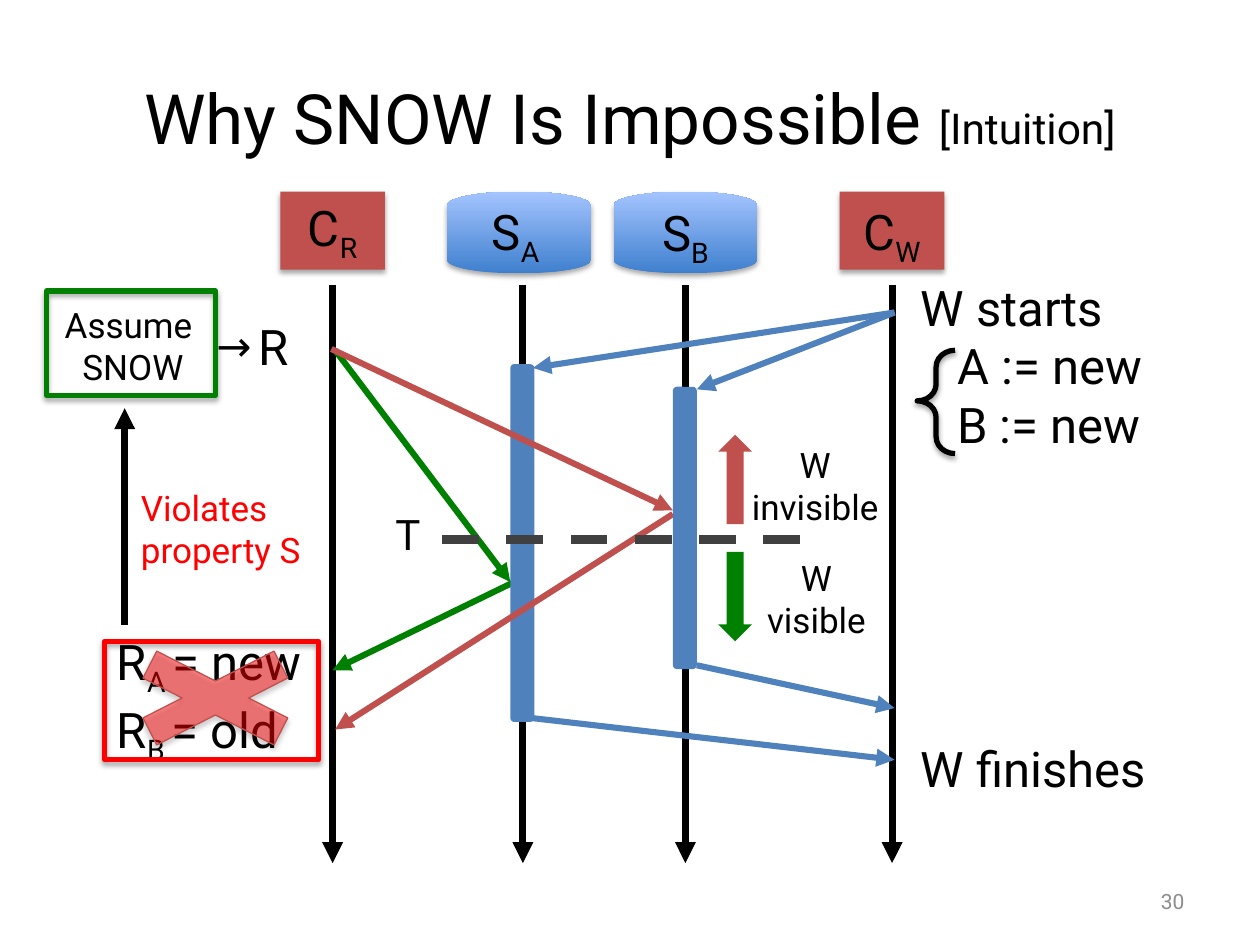
from pptx import Presentation
from pptx.dml.color import RGBColor
from pptx.enum.dml import MSO_LINE
from pptx.enum.shapes import MSO_CONNECTOR, MSO_SHAPE
from pptx.enum.text import MSO_ANCHOR, PP_ALIGN
from pptx.oxml.ns import qn
from pptx.util import Inches, Pt
from lxml import etree

RECT, DISK = MSO_SHAPE.RECTANGLE, MSO_SHAPE.FLOWCHART_MAGNETIC_DISK
LEFT, CENTER, RIGHT = PP_ALIGN.LEFT, PP_ALIGN.CENTER, PP_ALIGN.RIGHT
TOP, MIDDLE = MSO_ANCHOR.TOP, MSO_ANCHOR.MIDDLE

THEME = dict(
    font="Roboto", black="000000", grey="8C8C8C", dash="404040",
    red="C0504D", blue="4F81BD", green="008000", alert="FF0000",
    disk=("3F80CE", "A4C4FF"),
    title=39.6, aside=24.3, big=28, mid=24, small=20, number=12,
    axis=4, message=3.5, cut=5.25, frame=3, hair=0.75,
)
T = THEME

# Lanes: name, subscript, axis x, head centre, head shape, head size, label top, label width, align
CLIENT, SERVER = (0.83, 0.62), (1.14, 0.65)
LANES = [
    ("C", "R", 2.64, 2.64, RECT, CLIENT, 1.52, 1.23, CENTER),
    ("S", "A", 4.15, 4.12, DISK, SERVER, 1.55, 0.69, LEFT),
    ("S", "B", 5.44, 5.44, DISK, SERVER, 1.56, 0.69, CENTER),
    ("C", "W", 7.08, 7.08, RECT, CLIENT, 1.55, 1.23, CENTER),
]
HEAD_TOP, AXIS_TOP, AXIS_END = 1.52, 2.26, 6.85
BAR_W = 0.19

# Steps from back to front: messages (colour, from, to) and server bars (x, top, height)
STEPS = [
    ("blue", (7.1, 2.48), (4.23, 2.92)),
    ("blue", (7.1, 2.48), (5.53, 3.09)),
    ("green", (2.66, 2.78), (4.05, 4.62)),
    ("green", (4.12, 4.6), (2.64, 5.32)),
    ("blue", (5.53, 5.28), (7.1, 5.62)),
    ("blue", (4.23, 5.7), (7.1, 6.03)),
    ("bar", 4.05, 2.89, 2.84),
    ("red", (2.63, 2.77), (5.34, 4.05)),
    ("red", (5.34, 4.08), (2.66, 5.79)),
    ("bar", 5.34, 3.07, 2.24),
]

# Texts: box, paragraphs, format
TEXTS = [
    ((0.5, 0.3, 9, 1.25), [["Why SNOW Is Impossible ", ("[Intuition]", dict(size=T["aside"]))]],
     dict(size=T["title"], align=CENTER, anchor=MIDDLE)),
    ((7.17, 6.95, 2.33, 0.4), ["30"],
     dict(size=T["number"], color=T["grey"], align=RIGHT, anchor=MIDDLE)),
    ((0.83, 4.96, 1.88, 0.57), [["R", ("A ", dict(sub=True)), "= new"]], {}),
    ((0.83, 5.5, 1.67, 0.57), [["R", ("B ", dict(sub=True)), "= old"]], {}),
    ((7.21, 2.15, 2.4, 1.99), ["W starts", "A := new", "B := new"], dict(indents=(0, 0.29, 0.29))),
    ((7.21, 5.81, 2.44, 0.57), ["W finishes"], {}),
    ((5.78, 3.47, 1.38, 0.77), ["W", "invisible"], dict(size=T["small"], align=CENTER)),
    ((5.92, 4.37, 1.12, 0.77), ["W", "visible"], dict(size=T["small"], align=CENTER)),
    ((1.95, 2.46, 0.48, 0.57), ["R"], {}),
    ((3.04, 3.99, 0.4, 0.5), ["T"], dict(size=T["mid"])),
    ((0.4, 2.36, 1.31, 0.77), ["Assume ", "SNOW"], dict(size=T["small"], align=CENTER)),
    ((1.62, 2.49, 0.53, 0.5), ["→"], dict(size=T["mid"])),
    ((1.02, 3.81, 1.56, 0.77), ["Violates", "property S"],
     dict(size=T["small"], color=T["alert"])),
]

# Shapes: preset, box, format
SHAPES = [
    (MSO_SHAPE.UP_ARROW, (5.7, 3.45, 0.27, 0.71), dict(fill=T["red"])),
    (MSO_SHAPE.DOWN_ARROW, (5.7, 4.38, 0.27, 0.71), dict(fill=T["green"])),
    (MSO_SHAPE.LEFT_BRACE, (7.28, 2.78, 0.3, 0.82),
     dict(line=T["black"], shadow=38, adjust=(0.44, 0.49))),
    (RECT, (0.83, 5.09, 1.7, 0.94), dict(line=T["alert"], shadow=35)),
    (MSO_SHAPE.MATH_MULTIPLY, (0.71, 5.03, 2, 1.02),
     dict(fill=T["alert"], alpha=47, line=T["red"], width=T["hair"], shadow=35)),
    (RECT, (0.37, 2.31, 1.34, 0.83), dict(line=T["green"], shadow=35)),
]


def rgb(color):
    return RGBColor.from_string(color)


def add_alpha(parent, percent):
    etree.SubElement(parent, qn("a:alpha"), val=str(percent * 1000))


def add_shadow(sp, percent):
    """Put a soft black shadow below the shape."""
    effects = sp._element.spPr.find(qn("a:effectLst"))
    outer = etree.SubElement(effects, qn("a:outerShdw"), blurRad=str(Pt(3.1)),
                             dist=str(Pt(1.8)), dir="5400000", rotWithShape="0")
    add_alpha(etree.SubElement(outer, qn("a:srgbClr"), val=T["black"]), percent)


def add_shape(s, preset, box, fill=None, alpha=None, line=None, width=T["frame"],
              shadow=None, adjust=()):
    """A tuple as fill gives a gradient from bottom to top."""
    sp = s.shapes.add_shape(preset, *map(Inches, box))
    for i, value in enumerate(adjust):
        sp.adjustments[i] = value
    if fill is None:
        sp.fill.background()
    elif isinstance(fill, tuple):
        sp.fill.gradient()
        sp.fill.gradient_angle = 90
        for stop, color in zip(sp.fill.gradient_stops, fill):
            stop.color.rgb = rgb(color)
    else:
        sp.fill.solid()
        sp.fill.fore_color.rgb = rgb(fill)
        if alpha:
            add_alpha(sp._element.spPr.find(qn("a:solidFill"))[0], alpha)
    if line:
        sp.line.color.rgb = rgb(line)
        sp.line.width = Pt(width)
    else:
        sp.line.fill.background()
    sp.shadow.inherit = False
    if shadow:
        add_shadow(sp, shadow)


def add_line(s, start, end, color, width, arrow=True, dash=None):
    c = s.shapes.add_connector(MSO_CONNECTOR.STRAIGHT, *map(Inches, start + end))
    c.line.color.rgb = rgb(color)
    c.line.width = Pt(width)
    if dash:
        c.line.dash_style = dash
    if arrow:
        etree.SubElement(c._element.spPr.find(qn("a:ln")), qn("a:tailEnd"), type="triangle")
    etree.SubElement(c._element.spPr, qn("a:effectLst"))


def add_text(s, box, paragraphs, size=T["big"], color=T["black"], align=LEFT,
             anchor=TOP, indents=()):
    """A paragraph is a string, or a list of strings and (string, format) runs."""
    tf = s.shapes.add_textbox(*map(Inches, box)).text_frame
    tf.word_wrap = True
    tf.vertical_anchor = anchor
    for i, runs in enumerate(paragraphs):
        p = tf.add_paragraph() if i else tf.paragraphs[0]
        p.alignment = align
        if indents:
            p._p.get_or_add_pPr().set("marL", str(Inches(indents[i])))
        for run in [runs] if isinstance(runs, str) else runs:
            text, own = (run, {}) if isinstance(run, str) else run
            r = p.add_run()
            r.text = text
            r.font.name = T["font"]
            r.font.size = Pt(own.get("size", size))
            r.font.color.rgb = rgb(color)
            if own.get("sub"):
                r._r.get_or_add_rPr().set("baseline", "-25000")


def add_lane(s, name, sub, x, head_x, preset, size, label_top, label_w, align):
    w, h = size
    add_shape(s, preset, (head_x - w / 2, HEAD_TOP, w, h),
              fill=T["disk"] if preset == DISK else T["red"], shadow=35)
    add_line(s, (x, AXIS_TOP), (x, AXIS_END), T["black"], T["axis"])
    add_text(s, (x - label_w / 2, label_top, label_w, 0.57),
             [[name, (sub, dict(sub=True))]], align=align)


def main():
    prs = Presentation()
    prs.slide_width, prs.slide_height = Inches(10), Inches(7.5)
    s = prs.slides.add_slide(prs.slide_layouts[6])
    for lane in LANES:
        add_lane(s, *lane)
    for box, paragraphs, style in TEXTS:
        add_text(s, box, paragraphs, **style)
    for kind, *place in STEPS:
        if kind == "bar":
            x, top, height = place
            add_shape(s, MSO_SHAPE.ROUNDED_RECTANGLE, (x, top, BAR_W, height), fill=T["blue"])
        else:
            add_line(s, *place, T[kind], T["message"])
    add_line(s, (3.51, 4.28), (6.4, 4.28), T["dash"], T["cut"], arrow=False, dash=MSO_LINE.DASH)
    add_line(s, (0.99, 4.96), (0.99, 3.24), T["black"], T["axis"])
    for preset, box, style in SHAPES:
        add_shape(s, preset, box, **style)
    prs.save("out.pptx")


if __name__ == "__main__":
    main()
